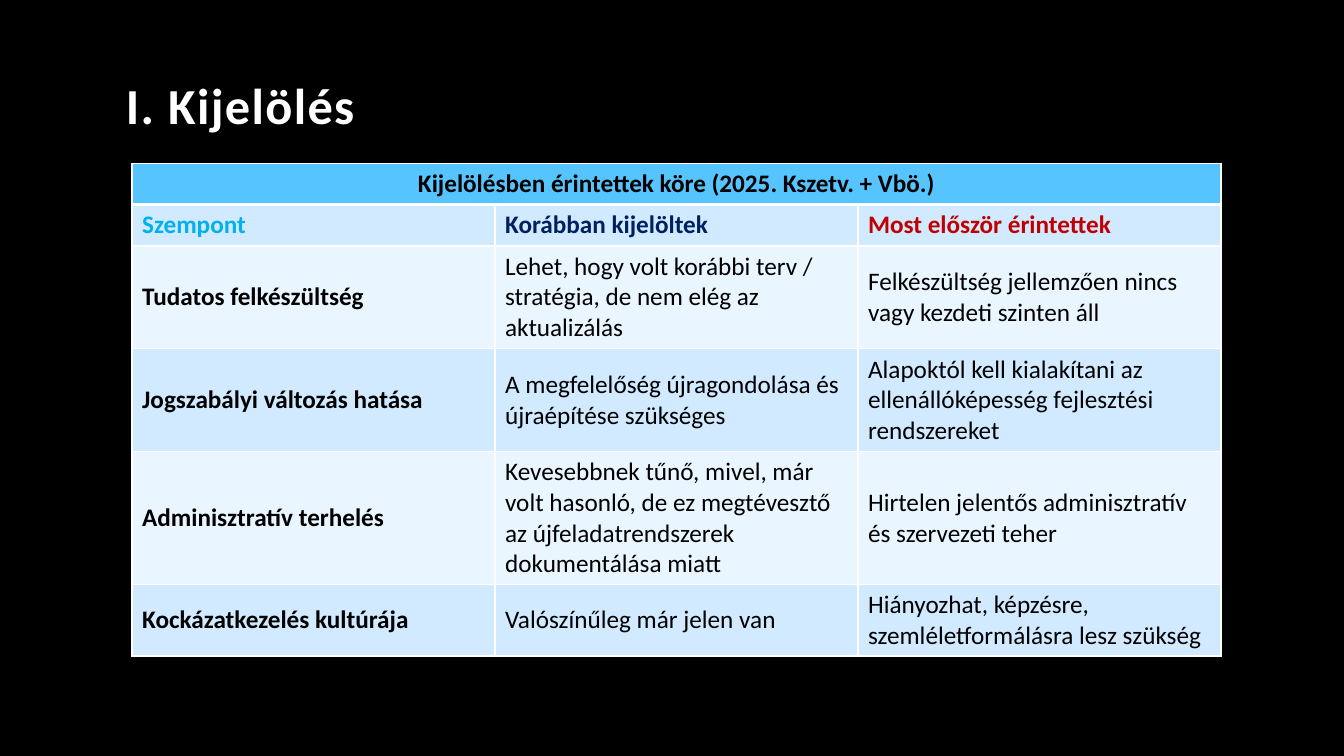
from lxml.etree import SubElement
from pptx import Presentation
from pptx.dml.color import RGBColor
from pptx.enum.text import MSO_ANCHOR, PP_ALIGN
from pptx.oxml.ns import qn
from pptx.util import Inches, Pt

BLACK = RGBColor(0x00, 0x00, 0x00)
WHITE = RGBColor(0xFF, 0xFF, 0xFF)
HEADER_BLUE = RGBColor(0x56, 0xC5, 0xFF)
BAND_DARK = RGBColor(0xD1, 0xEA, 0xFF)
BAND_LIGHT = RGBColor(0xE9, 0xF5, 0xFF)
SKY = RGBColor(0x00, 0xB0, 0xF0)
NAVY = RGBColor(0x00, 0x20, 0x60)
RED = RGBColor(0xC0, 0x00, 0x00)

TABLE_TITLE = "Kijelölésben érintettek köre (2025. Kszetv. + Vbö.)"
COLUMN_HEADS = ("Szempont", "Korábban kijelöltek", "Most először érintettek")
HEAD_COLORS = (SKY, NAVY, RED)
ASPECTS = [
    ("Tudatos felkészültség",
     "Lehet, hogy volt korábbi terv / stratégia, de nem elég az aktualizálás",
     "Felkészültség jellemzően nincs vagy kezdeti szinten áll"),
    ("Jogszabályi változás hatása",
     "A megfelelőség újragondolása és újraépítése szükséges",
     "Alapoktól kell kialakítani az ellenállóképesség fejlesztési rendszereket"),
    ("Adminisztratív terhelés",
     "Kevesebbnek tűnő, mivel, már volt hasonló, de ez megtévesztő "
     "az újfeladatrendszerek dokumentálása miatt",
     "Hirtelen jelentős adminisztratív és szervezeti teher"),
    ("Kockázatkezelés kultúrája",
     "Valószínűleg már jelen van",
     "Hiányozhat, képzésre, szemléletformálásra lesz szükség"),
]
ROW_HEIGHTS = (0.41, 0.41, 1.02, 1.02, 1.32, 0.71)
COLUMN_WIDTH = 3.6


class SlideBuilder:
    """Holds the text style and the current slide."""

    text_format = {"name": "Calibri", "size": Pt(18), "bold": False}

    def __init__(self, presentation, background):
        self.slide = presentation.slides.add_slide(presentation.slide_layouts[6])
        fill = self.slide.background.fill
        fill.solid()
        fill.fore_color.rgb = background

    def add_text(self, text_frame, text, color, **changes):
        paragraph = text_frame.paragraphs[0]
        run = paragraph.add_run()
        run.text = text
        for name, value in {**self.text_format, **changes}.items():
            setattr(run.font, name, value)
        run.font.color.rgb = color
        return paragraph, run

    def title(self, text, left, top, width, height):
        box = self.slide.shapes.add_textbox(
            Inches(left), Inches(top), Inches(width), Inches(height))
        frame = box.text_frame
        frame.word_wrap = True
        frame.vertical_anchor = MSO_ANCHOR.BOTTOM
        paragraph, run = self.add_text(frame, text, WHITE, size=Pt(36), bold=True)
        paragraph.line_spacing = 0.9
        # Letter spacing in hundredths of a point
        run._r.get_or_add_rPr().set("spc", "100")

    def table(self, left, top, column_count, column_width, row_heights):
        frame = self.slide.shapes.add_table(
            len(row_heights), column_count, Inches(left), Inches(top),
            Inches(column_width * column_count), Inches(sum(row_heights)))
        table = frame.table
        for column in table.columns:
            column.width = Inches(column_width)
        for row, height in zip(table.rows, row_heights):
            row.height = Inches(height)
        return table

    def cell(self, cell, fill_color, top_width=1, bottom_width=1):
        cell.vertical_anchor = MSO_ANCHOR.MIDDLE
        properties = cell._tc.get_or_add_tcPr()
        # Borders come before the fill in the cell properties
        for side, width in (("L", 1), ("R", 1), ("T", top_width), ("B", bottom_width)):
            line = SubElement(properties, qn(f"a:ln{side}"), w=str(int(Pt(width))))
            color = SubElement(SubElement(line, qn("a:solidFill")), qn("a:srgbClr"))
            color.set("val", str(WHITE))
        cell.fill.solid()
        cell.fill.fore_color.rgb = fill_color


def main():
    presentation = Presentation()
    presentation.slide_width = Inches(13.33)
    presentation.slide_height = Inches(7.5)
    builder = SlideBuilder(presentation, BLACK)

    builder.title("I. Kijelölés", 1.15, 0.42, 11.34, 0.97)

    # Table grid
    table = builder.table(1.31, 1.62, len(COLUMN_HEADS), COLUMN_WIDTH, ROW_HEIGHTS)

    # Merged heading row
    for cell in table.rows[0].cells:
        builder.cell(cell, HEADER_BLUE, bottom_width=3)
    heading = table.cell(0, 0)
    heading.merge(table.cell(0, len(COLUMN_HEADS) - 1))
    paragraph, _ = builder.add_text(heading.text_frame, TABLE_TITLE, BLACK, bold=True)
    paragraph.alignment = PP_ALIGN.CENTER

    # Column heads and banded body rows
    for row, texts in enumerate([COLUMN_HEADS, *ASPECTS], start=1):
        is_head = row == 1
        for column, text in enumerate(texts):
            cell = table.cell(row, column)
            builder.cell(cell, BAND_DARK if row % 2 else BAND_LIGHT,
                         top_width=3 if is_head else 1)
            builder.add_text(cell.text_frame, text,
                             HEAD_COLORS[column] if is_head else BLACK,
                             bold=is_head or column == 0)

    presentation.save("out.pptx")


if __name__ == "__main__":
    main()
